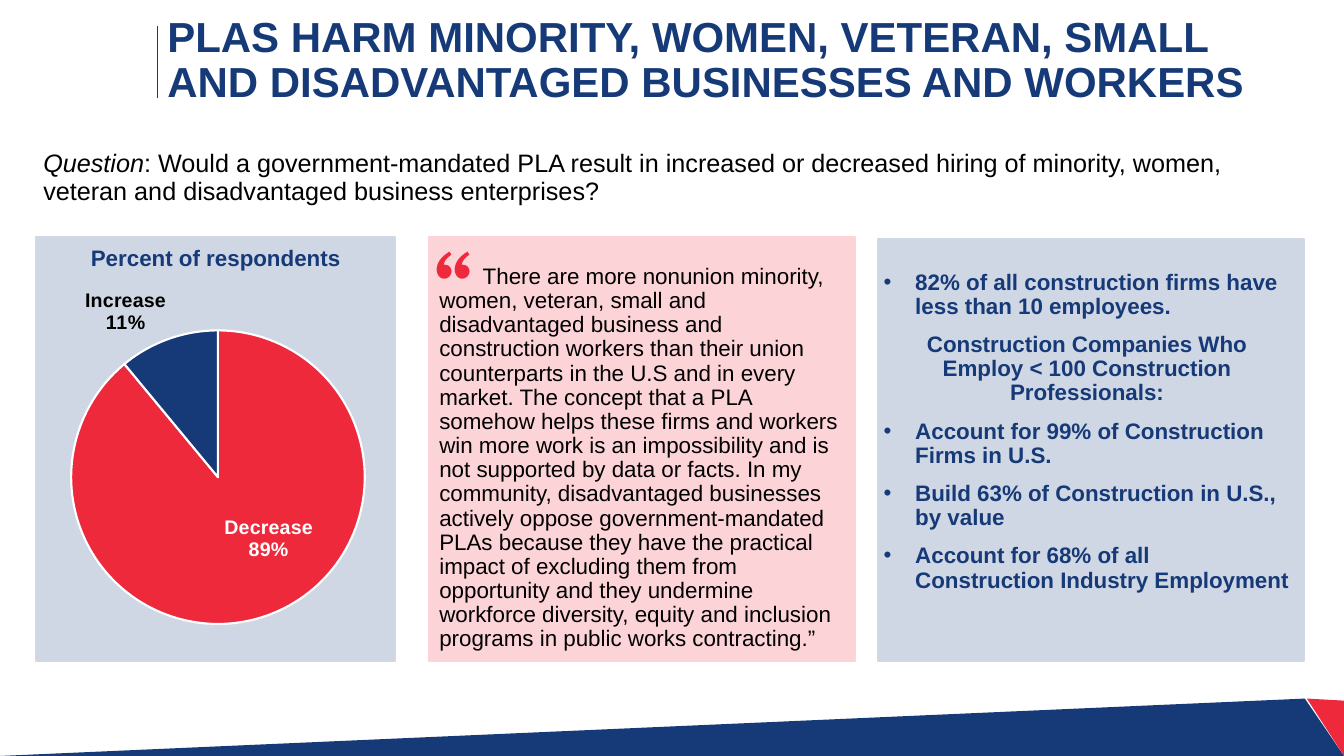
from lxml.etree import SubElement
from pptx import Presentation
from pptx.chart.data import CategoryChartData
from pptx.dml.color import RGBColor
from pptx.enum.chart import XL_CHART_TYPE, XL_LABEL_POSITION
from pptx.enum.shapes import MSO_CONNECTOR, MSO_SHAPE
from pptx.enum.text import MSO_ANCHOR, MSO_AUTO_SIZE, PP_ALIGN
from pptx.oxml import parse_xml
from pptx.oxml.ns import nsdecls, qn
from pptx.util import Pt

NAVY = RGBColor(0x16, 0x3A, 0x78)
RED = RGBColor(0xEE, 0x29, 0x3C)
PINK = RGBColor(0xFC, 0xD4, 0xD8)
MIST = RGBColor(0xD0, 0xD8, 0xE4)
BLACK = RGBColor(0, 0, 0)
WHITE = RGBColor(255, 255, 255)

QUOTE = (
    "There are more nonunion minority, women, veteran, small and disadvantaged "
    "business and construction workers than their union counterparts in the U.S and "
    "in every market. The concept that a PLA somehow helps these firms and workers "
    "win more work is an impossibility and is not supported by data or facts. In my "
    "community, disadvantaged businesses actively oppose government-mandated PLAs "
    "because they have the practical impact of excluding them from opportunity and "
    "they undermine workforce diversity, equity and inclusion programs in public "
    "works contracting.”"
)
# Text and whether it carries a bullet
FACTS = [
    ("82% of all construction firms have less than 10 employees.", True),
    ("Construction Companies Who Employ < 100 Construction Professionals:", False),
    ("Account for 99% of Construction Firms in U.S.", True),
    ("Build 63% of Construction in U.S., by value", True),
    ("Account for 68% of all Construction Industry Employment", True),
]


def place(shape, left, top, width, height):
    shape.left, shape.top = Pt(left), Pt(top)
    shape.width, shape.height = Pt(width), Pt(height)


def add_run(paragraph, text, size, color, bold=False, italic=False, face="Arial"):
    run = paragraph.add_run()
    run.text = text
    font = run.font
    font.name, font.size, font.bold, font.italic = face, Pt(size), bold, italic
    font.color.rgb = color


def add_text_frame(slide, *box):
    frame = slide.shapes.add_textbox(*map(Pt, box)).text_frame
    frame.word_wrap = True
    return frame


def set_indent(paragraph, margin, indent, bullet=False):
    properties = paragraph._p.get_or_add_pPr()
    properties.set("marL", str(Pt(margin)))
    properties.set("indent", str(Pt(indent)))
    if bullet:
        SubElement(properties, qn("a:buFont")).set("typeface", "Arial")
        SubElement(properties, qn("a:buChar")).set("char", "•")


def add_panel(slide, box, fill, line, opacity=100):
    panel = slide.shapes.add_shape(MSO_SHAPE.RECTANGLE, *map(Pt, box))
    panel.shadow.inherit = False
    panel.fill.solid()
    panel.fill.fore_color.rgb = fill
    panel.line.color.rgb = line
    panel.line.width = Pt(1.5)
    if opacity < 100:
        color = panel.fill._xPr.find(qn("a:solidFill"))[0]
        SubElement(color, qn("a:alpha")).set("val", str(opacity * 1000))


def add_wedge(slide, color, corners):
    start, *others = [(Pt(x), Pt(y)) for x, y in corners]
    builder = slide.shapes.build_freeform(*start)
    builder.add_line_segments(others, close=True)
    wedge = builder.convert_to_shape()
    wedge.shadow.inherit = False
    wedge.fill.solid()
    wedge.fill.fore_color.rgb = color
    wedge.line.fill.background()


def add_title_rule(slide):
    rule = slide.shapes.add_connector(
        MSO_CONNECTOR.STRAIGHT, Pt(112.3), Pt(18.7), Pt(112.3), Pt(69.8))
    rule.line.color.rgb = NAVY
    rule.line.width = Pt(0.5)
    SubElement(rule._element.spPr, qn("a:effectLst"))


def set_title(slide):
    title = slide.shapes.title
    place(title, 112.3, 19.4, 805, 49)
    frame = title.text_frame
    frame.word_wrap = True
    frame.auto_size = MSO_AUTO_SIZE.NONE
    frame.vertical_anchor = MSO_ANCHOR.MIDDLE
    heading = frame.paragraphs[0]
    heading.alignment = PP_ALIGN.LEFT
    heading.line_spacing = 0.9
    add_run(heading, "PLAS HARM MINORITY, WOMEN, VETERAN, SMALL AND "
            "DISADVANTAGED BUSINESSES AND WORKERS", 30, NAVY, bold=True)


def manual_layout(**settings):
    entries = "".join(f'<c:{key} val="{value}"/>' for key, value in settings.items())
    return parse_xml(f'<c:layout {nsdecls("c")}><c:manualLayout>{entries}'
                     '</c:manualLayout></c:layout>')


def add_responses_pie(slide):
    responses = CategoryChartData()
    responses.categories = ["Decrease", "Increase"]
    responses.add_series("Series 1", (89, 11))
    pie = slide.shapes.add_chart(
        XL_CHART_TYPE.PIE, Pt(-18), Pt(190), Pt(370), Pt(285), responses).chart
    pie.has_legend = False
    pie.has_title = False
    pie.font.name, pie.font.size = "Calibri", Pt(10)
    pie.font.color.rgb = BLACK

    plot = pie.plots[0]
    plot.vary_by_categories = True
    area = pie._chartSpace.chart.plotArea
    for layout in area.findall(qn("c:layout")):
        area.remove(layout)
    area.insert(0, manual_layout(layoutTarget="inner", xMode="edge", yMode="edge",
                                 x=0.186, y=0.118, w=0.567, h=0.823))

    answers = [(RED, WHITE, XL_LABEL_POSITION.CENTER),
               (NAVY, BLACK, XL_LABEL_POSITION.OUTSIDE_END)]
    for index, (fill, text_color, position) in enumerate(answers):
        point = plot.series[0].points[index]
        point.format.fill.solid()
        point.format.fill.fore_color.rgb = fill
        point.format.line.color.rgb = WHITE
        point.format.line.width = Pt(1.5)
        label = point.data_label
        font = label.font
        font.name, font.size, font.bold = "Arial", Pt(14), True
        font.color.rgb = text_color
        label.position = position

    # Show category and percentage on separate lines
    labels = plot.series[0]._element.find(qn("c:dLbls"))
    for label in labels.findall(qn("c:dLbl")):
        for key, shown in (("showVal", 0), ("showCatName", 1), ("showPercent", 1)):
            label.find(qn(f"c:{key}")).set("val", str(shown))
        SubElement(label, qn("c:separator")).text = "\n"
    labels.find(qn("c:dLbl")).insert(1, manual_layout(x=0.05, y=-0.02))


def add_facts(slide):
    frame = add_text_frame(slide, 624.2, 190, 304.6, 240)
    for index, (fact, bulleted) in enumerate(FACTS):
        paragraph = frame.add_paragraph() if index else frame.paragraphs[0]
        if bulleted:
            set_indent(paragraph, 22.5, -22.5, bullet=True)
        else:
            paragraph.alignment = PP_ALIGN.CENTER
        paragraph.line_spacing = 0.9
        paragraph.space_before = Pt(10 if index else 0)
        add_run(paragraph, fact, 16, NAVY, bold=True)


def main():
    deck = Presentation()
    deck.slide_width, deck.slide_height = Pt(960), Pt(540)
    slide = deck.slides.add_slide(deck.slide_layouts[5])

    # Heading and footer wedges
    add_title_rule(slide)
    add_wedge(slide, NAVY, [(0, 540), (932, 499), (960, 540)])
    add_wedge(slide, RED, [(933.5, 499), (960, 500.5), (960, 540)])
    set_title(slide)

    # Survey question
    question = add_text_frame(slide, 23.8, 104.4, 893.5, 46.8).paragraphs[0]
    question.line_spacing = 0.9
    add_run(question, "Question", 18, BLACK, italic=True)
    add_run(question, ": Would a government-mandated PLA result in increased or "
            "decreased hiring of minority, women, veteran and disadvantaged "
            "business enterprises?", 18, BLACK)

    # Quotation
    add_panel(slide, (306.7, 169.2, 303.8, 303.1), PINK, PINK)
    quotation = add_text_frame(slide, 306.7, 185.8, 301.7, 286.6).paragraphs[0]
    set_indent(quotation, 0, 31)
    quotation.line_spacing = 0.9
    add_run(quotation, QUOTE, 16, BLACK)
    quote_mark = add_text_frame(slide, 303.8, 162.7, 36.7, 72.7).paragraphs[0]
    add_run(quote_mark, "“", 54, RED, bold=True, face="TeX Gyre Schola")

    # Survey responses
    add_panel(slide, (25.9, 169.2, 256.3, 303.1), NAVY, MIST, opacity=20)
    add_responses_pie(slide)
    caption = add_text_frame(slide, 25.9, 172.8, 256.3, 25.2).paragraphs[0]
    caption.alignment = PP_ALIGN.CENTER
    caption.line_spacing = 0.9
    add_run(caption, "Percent of respondents", 16, NAVY, bold=True)

    # Small-business facts
    add_panel(slide, (627.1, 170.6, 304.6, 301.7), NAVY, MIST, opacity=20)
    add_facts(slide)

    deck.save("out.pptx")


if __name__ == "__main__":
    main()
